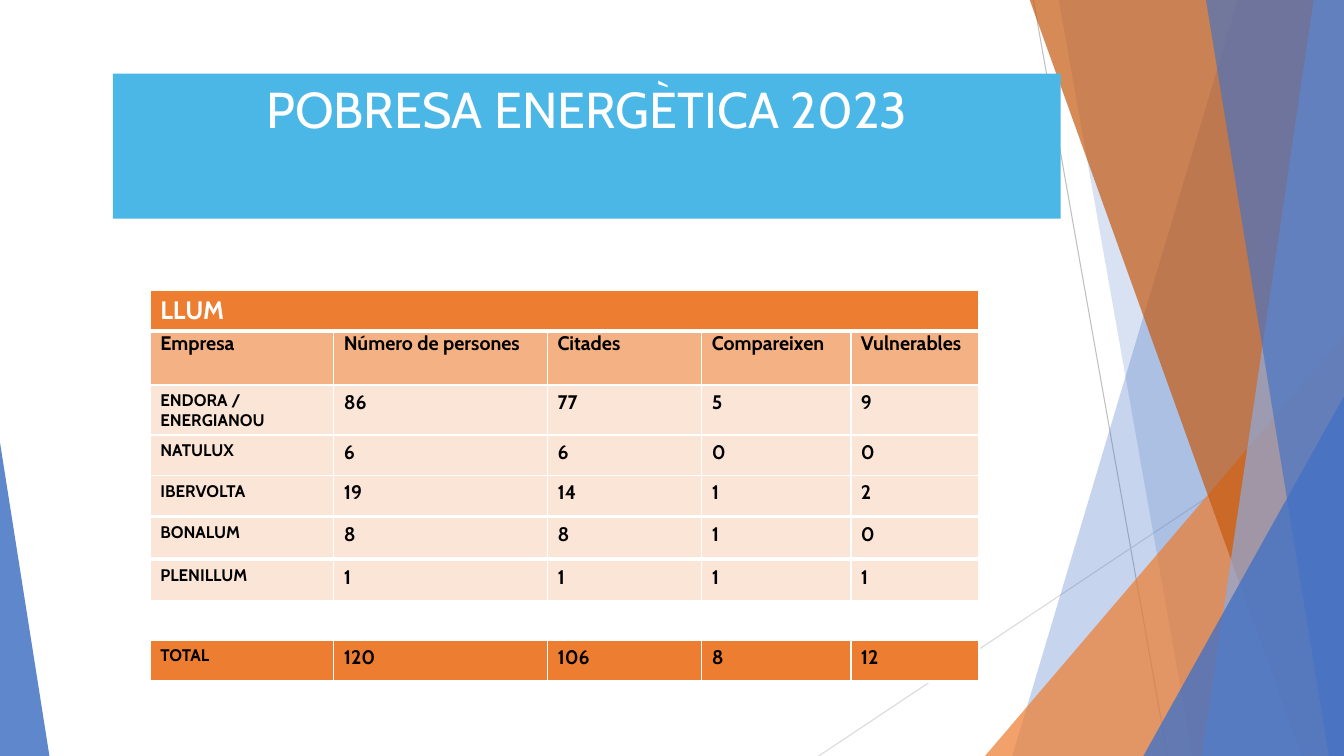
from lxml import etree
from pptx import Presentation
from pptx.dml.color import RGBColor
from pptx.enum.shapes import MSO_CONNECTOR, MSO_SHAPE
from pptx.enum.text import MSO_ANCHOR, PP_ALIGN
from pptx.oxml.ns import qn
from pptx.util import Inches, Pt

RECT, TRIANGLE = MSO_SHAPE.RECTANGLE, MSO_SHAPE.ISOSCELES_TRIANGLE
STRAIGHT = MSO_CONNECTOR.STRAIGHT
TOP, CENTER, LEFT = MSO_ANCHOR.TOP, PP_ALIGN.CENTER, PP_ALIGN.LEFT

FONT = "Cabin"
WHITE = RGBColor(0xFF, 0xFF, 0xFF)
BLACK = RGBColor(0x00, 0x00, 0x00)
SKY = RGBColor(0x4B, 0xB7, 0xE7)
BLUE = RGBColor(0x44, 0x72, 0xC4)
LIGHT_BLUE = RGBColor(0x8F, 0xAA, 0xDC)
ORANGE = RGBColor(0xED, 0x7D, 0x31)
RUST = RGBColor(0xC5, 0x5A, 0x11)
PEACH = RGBColor(0xF4, 0xB1, 0x83)
CREAM = RGBColor(0xFB, 0xE5, 0xD6)
GREY = RGBColor(0xBF, 0xBF, 0xBF)
PALE_GREY = RGBColor(0xD9, 0xD9, 0xD9)

# Content
TITLE = "POBRESA ENERGÈTICA 2023"
SECTION = ["LLUM"]
HEADINGS = ["Empresa", "Número de persones", "Citades", "Compareixen", "Vulnerables"]
COMPANIES = [  # top, height, cells
    (3.82, 0.5, ["ENDORA / ENERGIANOU", "86", "77", "5", "9"]),
    (4.32, 0.41, ["NATULUX", "6", "6", "0", "0"]),
    (4.72, 0.41, ["IBERVOLTA", "19", "14", "1", "2"]),
    (5.13, 0.41, ["BONALUM", "8", "8", "1", "0"]),
    (5.56, 0.41, ["PLENILLUM", "1", "1", "1", "1"]),
]
TOTAL = ["TOTAL", "120", "106", "8", "12"]

# Geometry
W, H, EDGE = 13.33, 7.5, -0.01
TABLE_LEFT = 1.49
COLS = [1.82, 2.12, 1.53, 1.48, 1.27]
BORDERS = [("a:lnL", 1), ("a:lnR", 1), ("a:lnT", 1), ("a:lnB", 3)]
LINES = [((10.25, 0), (11.58, H), GREY), ((W, 4.03), (8.12, H), PALE_GREY)]
# Bands reach the right edge: top-left x, bottom-left x, colour, opacity %
BACK_BANDS = [(12.28, 10.04, BLUE, 30), (10.5, 11.83, BLUE, 20)]
FRONT_BANDS = [(10.21, 12.91, RUST, 70), (13.03, 11.92, LIGHT_BLUE, 70),
               (11.96, 13.18, BLUE, 65)]
# Triangles stand on the bottom edge: left, top, width, apex, colour, opacity %
BACK_TRIANGLES = [(9.77, 3.33, 3.56, 1, ORANGE, 72)]
FRONT_TRIANGLES = [(11.34, 3.93, 1.99, 1, BLUE, 80), (0, 4.39, 0.49, 0, BLUE, 85)]

prs = Presentation()
prs.slide_width, prs.slide_height = Inches(W), Inches(H)
shapes = prs.slides.add_slide(prs.slide_layouts[6]).shapes


def put_text(tf, text, size=14, color=BLACK, bold=True, align=LEFT):
    tf.word_wrap = True
    p = tf.paragraphs[0]
    p.alignment = align
    r = p.add_run()
    r.text = text
    r.font.name, r.font.size, r.font.bold = FONT, Pt(size), bold
    r.font.color.rgb = color


def paint(sp, color, opacity=100):
    sp.shadow.inherit = False
    sp.line.fill.background()
    sp.fill.solid()
    sp.fill.fore_color.rgb = color
    if opacity < 100:
        clr = sp.fill._xPr.find(qn("a:solidFill"))[0]
        etree.SubElement(clr, qn("a:alpha"), val=str(opacity * 1000))


def add_line(start, end, color):
    line = shapes.add_connector(STRAIGHT, *[Inches(v) for v in (*start, *end)])
    line.line.color.rgb = color
    line.line.width = Pt(0.75)
    etree.SubElement(line._element.spPr, qn("a:effectLst"))


def add_band(top_x, bottom_x, color, opacity):
    corners = [(top_x, EDGE), (W, EDGE), (W, H), (bottom_x, H)]
    points = [(Inches(x), Inches(y)) for x, y in corners]
    builder = shapes.build_freeform(*points[0], scale=1.0)
    builder.add_line_segments(points[1:], close=True)
    paint(builder.convert_to_shape(), color, opacity)


def add_triangle(left, top, width, apex, color, opacity):
    sp = shapes.add_shape(TRIANGLE, Inches(left), Inches(top),
                          Inches(width), Inches(H - top))
    sp.adjustments[0] = apex
    paint(sp, color, opacity)


def add_borders(cell):
    tc_pr = cell._tc.get_or_add_tcPr()
    for tag, width in BORDERS:
        ln = etree.SubElement(tc_pr, qn(tag), w=str(Pt(width)))
        fill = etree.SubElement(ln, qn("a:solidFill"))
        etree.SubElement(fill, qn("a:srgbClr"), val=str(WHITE))


def add_row(top, height, texts, fill, cols=COLS, first_size=12, color=BLACK):
    table = shapes.add_table(1, len(cols), Inches(TABLE_LEFT), Inches(top),
                             Inches(sum(cols)), Inches(height)).table
    table.first_row = table.horz_banding = False
    for i, (width, text) in enumerate(zip(cols, texts)):
        table.columns[i].width = Inches(width)
        cell = table.cell(0, i)
        add_borders(cell)
        cell.fill.solid()
        cell.fill.fore_color.rgb = fill
        put_text(cell.text_frame, text, size=14 if i else first_size, color=color)


# Background decoration
for line in LINES:
    add_line(*line)
for band in BACK_BANDS:
    add_band(*band)
for triangle in BACK_TRIANGLES:
    add_triangle(*triangle)
for band in FRONT_BANDS:
    add_band(*band)
for triangle in FRONT_TRIANGLES:
    add_triangle(*triangle)

# Tables
add_row(3.24, 0.59, HEADINGS, PEACH, first_size=14)
for top, height, cells in COMPANIES:
    add_row(top, height, cells, CREAM)
add_row(2.88, 0.4, SECTION, ORANGE, cols=[sum(COLS)], first_size=18, color=WHITE)
add_row(6.35, 0.41, TOTAL, ORANGE)

# Title
sp = shapes.add_shape(RECT, Inches(1.12), Inches(0.73), Inches(9.4), Inches(1.44))
paint(sp, SKY)
sp.text_frame.vertical_anchor = TOP
put_text(sp.text_frame, TITLE, size=36, color=WHITE, bold=False, align=CENTER)

prs.save("out.pptx")
